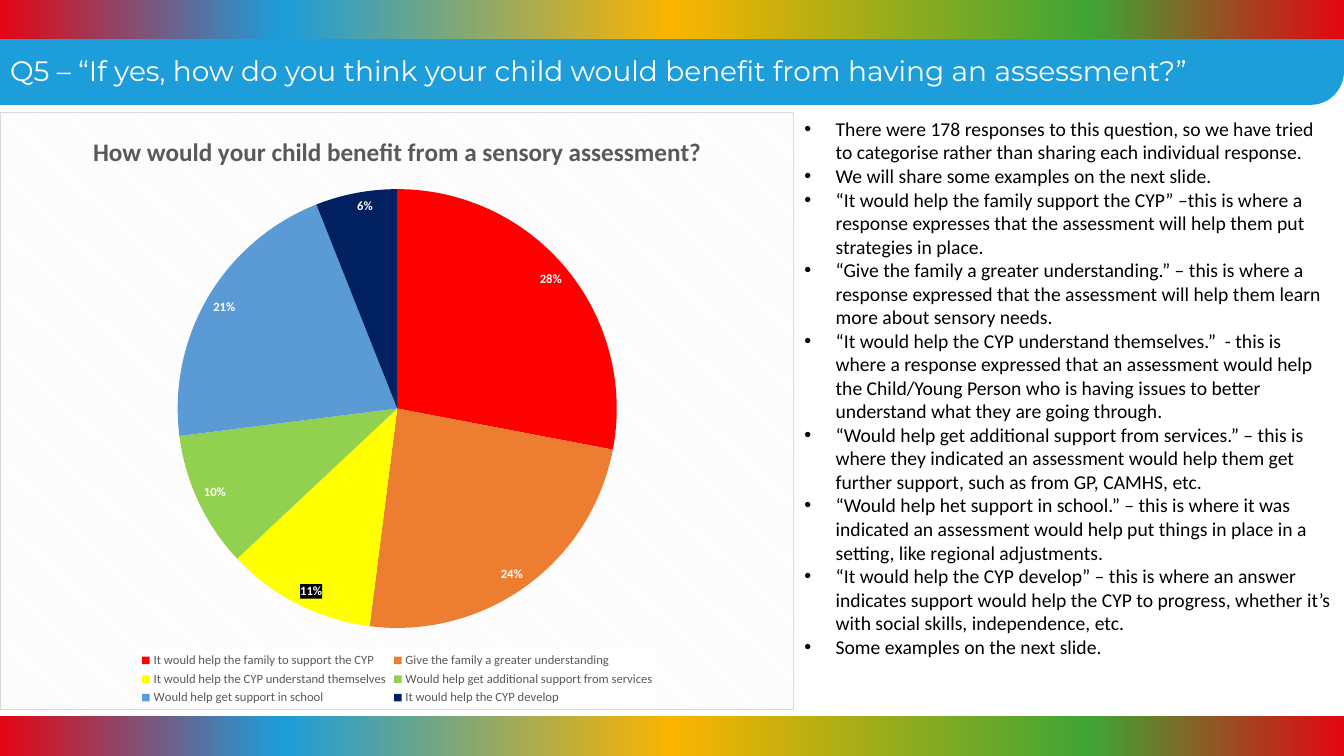
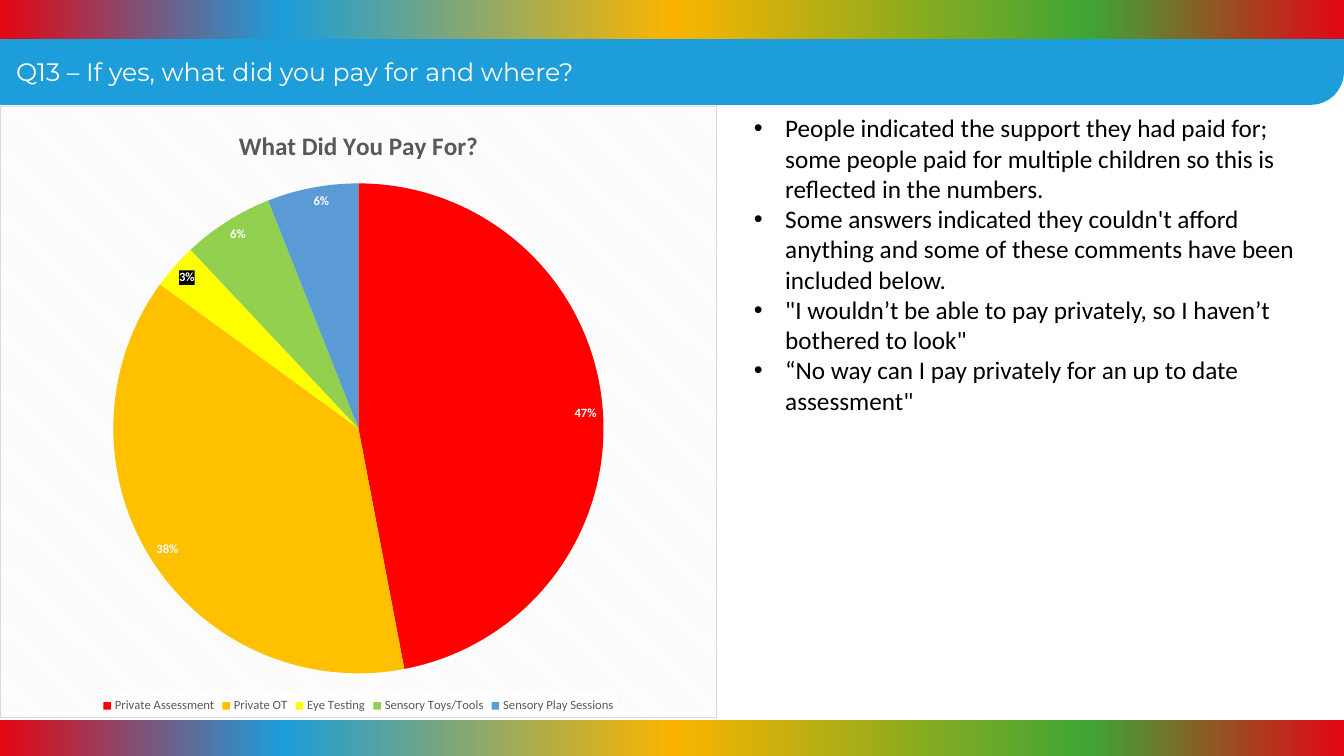
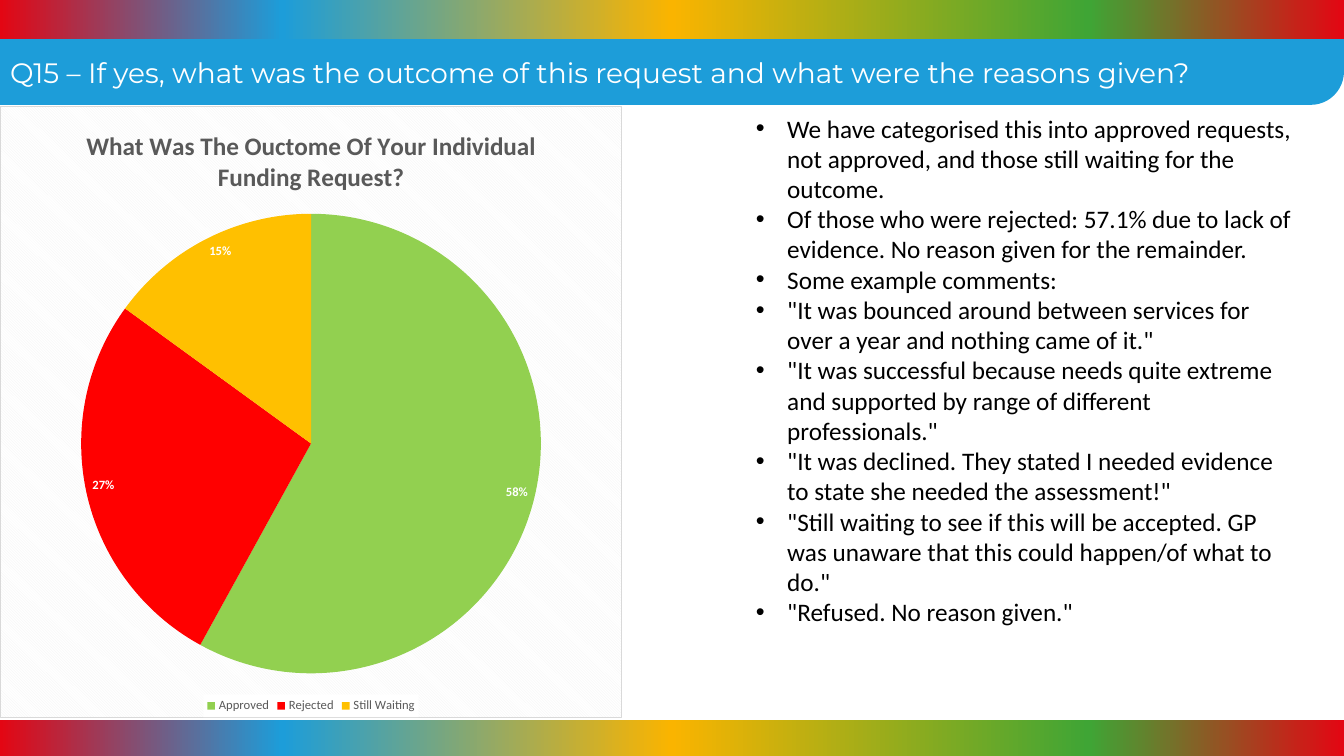
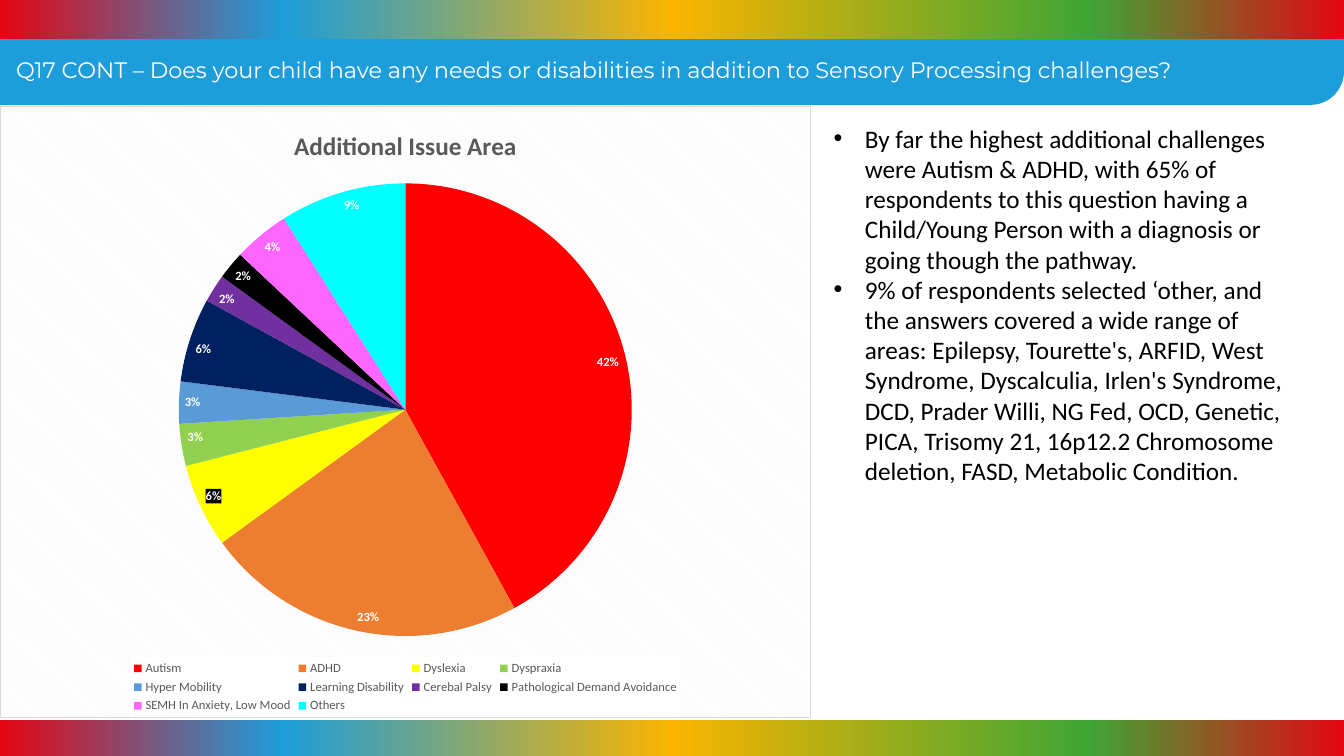
import pptx
import pptx.util
import pptx.chart.data
import pptx.dml.color
import pptx.enum.chart
import pptx.enum.shapes
import pptx.enum.text
import pptx.oxml
import pptx.oxml.ns
import lxml.etree

Inches = pptx.util.Inches
Pt = pptx.util.Pt
qn = pptx.oxml.ns.qn
NS = pptx.oxml.ns.nsdecls("a", "c")

HUES = {
    "white": "FFFFFF", "black": "000000", "grey": "595959", "pale": "F2F2F2",
    "edge": "D9D9D9", "band": "1D9DD9", "red": "FF0000", "orange": "ED7D31",
    "gold": "FFC000", "yellow": "FFFF00", "green": "92D050", "blue": "5B9BD5",
    "navy": "002060", "purple": "7030A0", "pink": "FF66FF", "cyan": "00FFFF",
}
STOPS = [(0, "E30613"), (21, "1D9DD9"), (50, "FAB400"), (81, "3FA535"), (100, "E30613")]

# What each slide says
PAGES = [
    {
        "title": "Q5 – “If yes, how do you think your child would benefit from having an assessment?”",
        "head": (0, 0.48, 13.15, 0.44), "size": 20, "foot": 7.1,
        "box": (7.88, 1.11, 5.45, 5.52), "body": 14,
        "points": [
            "There were 178 responses to this question, so we have tried to categorise rather than sharing each individual response.",
            "We will share some examples on the next slide.",
            "“It would help the family support the CYP” –this is where a response expresses that the assessment will help them put strategies in place.",
            "“Give the family a greater understanding.” – this is where a response expressed that the assessment will help them learn more about sensory needs.",
            "“It would help the CYP understand themselves.”  - this is where a response expressed that an assessment would help the Child/Young Person who is having issues to better understand what they are going through.",
            "“Would help get additional support from services.” – this is where they indicated an assessment would help them get further support, such as from GP, CAMHS, etc.",
            "“Would help het support in school.” – this is where it was indicated an assessment would help put things in place in a setting, like regional adjustments.",
            "“It would help the CYP develop” – this is where an answer indicates support would help the CYP to progress, whether it’s with social skills, independence, etc.",
            "Some examples on the next slide.",
        ],
        "name": "How would your child benefit from a sensory assessment?",
        "area": (0, 1.11, 7.88, 5.93),
        "pie": [
            ("It would help the family to support the CYP", 28, "red"),
            ("Give the family a greater understanding", 24, "orange"),
            ("It would help the CYP understand themselves", 11, "yellow"),
            ("Would help get additional support from services", 10, "green"),
            ("Would help get support in school", 21, "blue"),
            ("It would help the CYP develop", 6, "navy"),
        ],
    },
    {
        "title": "Q13 – If yes, what did you pay for and where?",
        "head": (0.06, 0.51, 13.27, 0.4), "size": 18, "foot": 7.14,
        "box": (7.38, 1.07, 5.67, 3.13), "body": 18,
        "points": [
            "People indicated the support they had paid for; some people paid for multiple children so this is reflected in the numbers.",
            "Some answers indicated they couldn't afford anything and some of these comments have been included below.",
            "\"I wouldn’t be able to pay privately, so I haven’t bothered to look\"",
            "“No way can I pay privately for an up to date assessment\"",
        ],
        "name": "What Did You Pay For?",
        "area": (0, 1.05, 7.11, 6.07),
        "pie": [
            ("Private Assessment", 47, "red"),
            ("Private OT", 38, "gold"),
            ("Eye Testing", 3, "yellow"),
            ("Sensory Toys/Tools", 6, "green"),
            ("Sensory Play Sessions", 6, "blue"),
        ],
    },
    {
        "title": "Q15 – If yes, what was the outcome of this request and what were the reasons given?",
        "head": (0, 0.5, 13.27, 0.44), "size": 20, "foot": 7.14,
        "box": (7.4, 1.07, 5.56, 5.55), "body": 18,
        "points": [
            "We have categorised this into approved requests, not approved, and those still waiting for the outcome.",
            "Of those who were rejected: 57.1% due to lack of evidence. No reason given for the remainder.",
            "Some example comments:",
            "\"It was bounced around between services for over a year and nothing came of it.\"",
            "\"It was successful because needs quite extreme and supported by range of different professionals.\"",
            "\"It was declined. They stated I needed evidence to state she needed the assessment!\"",
            "\"Still waiting to see if this will be accepted. GP was unaware that this could happen/of what to do.\"",
            "\"Refused. No reason given.\"",
        ],
        "name": "What Was The Ouctome Of Your Individual Funding Request?",
        "area": (0, 1.05, 6.17, 6.07),
        "pie": [
            ("Approved", 58, "green"),
            ("Rejected", 27, "red"),
            ("Still Waiting", 15, "gold"),
        ],
    },
    {
        "title": "Q17 CONT – Does your child have any needs or disabilities in addition to Sensory Processing challenges?",
        "head": (0.06, 0.51, 13.27, 0.37), "size": 16, "foot": 7.14,
        "box": (8.17, 1.17, 4.82, 4.04), "body": 18,
        "points": [
            "By far the highest additional challenges were Autism & ADHD, with 65% of respondents to this question having a Child/Young Person with a diagnosis or going though the pathway.",
            "9% of respondents selected ‘other, and the answers covered a wide range of areas: Epilepsy, Tourette's, ARFID, West Syndrome, Dyscalculia, Irlen's Syndrome, DCD, Prader Willi, NG Fed, OCD, Genetic, PICA, Trisomy 21, 16p12.2 Chromosome deletion, FASD, Metabolic Condition.",
        ],
        "name": "Additional Issue Area",
        "area": (0, 1.05, 8.04, 6.07),
        "pie": [
            ("Autism", 42, "red"),
            ("ADHD", 23, "orange"),
            ("Dyslexia", 6, "yellow"),
            ("Dyspraxia", 3, "green"),
            ("Hyper Mobility", 3, "blue"),
            ("Learning Disability", 6, "navy"),
            ("Cerebal Palsy", 2, "purple"),
            ("Pathological Demand Avoidance", 2, "black"),
            ("SEMH In Anxiety, Low Mood", 4, "pink"),
            ("Others", 9, "cyan"),
        ],
    },
]


def style(font, size, hue, face="Calibri", bold=False):
    font.size = Pt(size)
    font.name = face
    font.bold = bold
    font.color.rgb = pptx.dml.color.RGBColor.from_string(HUES[hue])


def solid(hue):
    return f'<a:solidFill><a:srgbClr val="{HUES[hue]}"/></a:solidFill>'


deck = pptx.Presentation()
deck.slide_width = Inches(13.33)
deck.slide_height = Inches(7.5)
KIND = pptx.enum.shapes.MSO_SHAPE

for page in PAGES:
    slide = deck.slides.add_slide(deck.slide_layouts[5])
    shapes = slide.shapes

    # Blue title band, rounded at bottom right
    band = shapes.add_shape(KIND.ROUND_1_RECTANGLE, 0, Inches(0.38), Inches(13.33), Inches(0.66))
    band.adjustments[0] = 0.5
    band.rotation = 180
    band.element.spPr.find(qn("a:xfrm")).set("flipH", "1")
    band.fill.solid()
    band.fill.fore_color.rgb = pptx.dml.color.RGBColor.from_string(HUES["band"])
    band.line.fill.background()
    band.shadow.inherit = False

    # Rainbow strips
    for top in (-0.01, page["foot"]):
        strip = shapes.add_shape(KIND.RECTANGLE, 0, Inches(top), Inches(13.33), Inches(0.4))
        strip.fill.gradient()
        strip.fill.gradient_angle = 0
        stops = strip.element.spPr.find(".//" + qn("a:gsLst"))
        stops.clear()
        for place, tint in STOPS:
            stop = lxml.etree.SubElement(stops, qn("a:gs"), pos=str(place * 1000))
            lxml.etree.SubElement(stop, qn("a:srgbClr"), val=tint)
        strip.line.fill.background()
        strip.shadow.inherit = False

    # Title, brought in front of the band
    title = shapes.title
    title.left, title.top, title.width, title.height = map(Inches, page["head"])
    title.element.getparent().append(title.element)
    frame = title.text_frame
    frame.word_wrap = True
    frame.auto_size = pptx.enum.text.MSO_AUTO_SIZE.NONE
    frame.vertical_anchor = pptx.enum.text.MSO_ANCHOR.TOP
    para = frame.paragraphs[0]
    para.alignment = pptx.enum.text.PP_ALIGN.LEFT
    run = para.add_run()
    run.text = page["title"]
    style(run.font, page["size"], "white", "Montserrat")

    # Bullet list
    frame = shapes.add_textbox(*map(Inches, page["box"])).text_frame
    frame.word_wrap = True
    for i, text in enumerate(page["points"]):
        para = frame.add_paragraph() if i else frame.paragraphs[0]
        props = para._p.get_or_add_pPr()
        props.set("marL", str(Inches(0.31)))
        props.set("indent", str(Inches(-0.31)))
        lxml.etree.SubElement(props, qn("a:buFont"), typeface="Arial")
        lxml.etree.SubElement(props, qn("a:buChar"), char="•")
        run = para.add_run()
        run.text = text
        style(run.font, page["body"], "black")

    # Pie chart
    data = pptx.chart.data.CategoryChartData()
    data.categories = [name for name, share, hue in page["pie"]]
    data.add_series("Series 1", [share for name, share, hue in page["pie"]])
    chart = shapes.add_chart(
        pptx.enum.chart.XL_CHART_TYPE.PIE, *map(Inches, page["area"]), data).chart
    style(chart.font, 10, "black")
    chart.has_title = True
    run = chart.chart_title.text_frame.paragraphs[0].add_run()
    run.text = page["name"]
    style(run.font, 18, "grey", bold=True)

    # Hatched chart ground with a thin edge
    chart._chartSpace.find(qn("c:chart")).addnext(pptx.oxml.parse_xml(
        f'<c:spPr {NS}><a:pattFill prst="dkDnDiag">'
        f'<a:fgClr><a:srgbClr val="{HUES["pale"]}"/></a:fgClr>'
        f'<a:bgClr><a:srgbClr val="{HUES["white"]}"/></a:bgClr></a:pattFill>'
        f'<a:ln w="9525">{solid("edge")}</a:ln></c:spPr>'))

    # Legend
    chart.has_legend = True
    key = chart.legend
    key.position = pptx.enum.chart.XL_LEGEND_POSITION.BOTTOM
    key.include_in_layout = False
    style(key.font, 9, "grey")
    key._element.find(qn("c:overlay")).addnext(
        pptx.oxml.parse_xml(f'<c:spPr {NS}>{solid("white")}</c:spPr>'))

    # Slices and their labels
    plot = chart.plots[0]
    plot.vary_by_categories = True
    series = plot.series[0]
    labels = series.data_labels
    labels.show_percentage = True
    labels.show_value = False
    labels.number_format = "0%"
    labels.number_format_is_linked = False
    labels.position = pptx.enum.chart.XL_LABEL_POSITION.INSIDE_END
    style(labels.font, 9, "white", bold=True)
    for i, (name, share, hue) in enumerate(page["pie"]):
        fill = series.points[i].format.fill
        fill.solid()
        fill.fore_color.rgb = pptx.dml.color.RGBColor.from_string(HUES[hue])
        if hue == "yellow":
            flags = "".join(
                f'<c:show{part} val="{int(part == "Percent")}"/>'
                for part in ("LegendKey", "Val", "CatName", "SerName", "Percent", "BubbleSize"))
            labels._element.insert(0, pptx.oxml.parse_xml(
                f'<c:dLbl {NS}><c:idx val="{i}"/>'
                f'<c:numFmt formatCode="0%" sourceLinked="0"/>'
                f'<c:spPr>{solid("black")}</c:spPr>'
                f'<c:txPr><a:bodyPr/><a:p><a:pPr><a:defRPr sz="900" b="1">{solid("white")}'
                f'<a:latin typeface="Calibri"/></a:defRPr></a:pPr></a:p></c:txPr>'
                f'<c:dLblPos val="inEnd"/>{flags}</c:dLbl>'))

deck.save("out.pptx")
